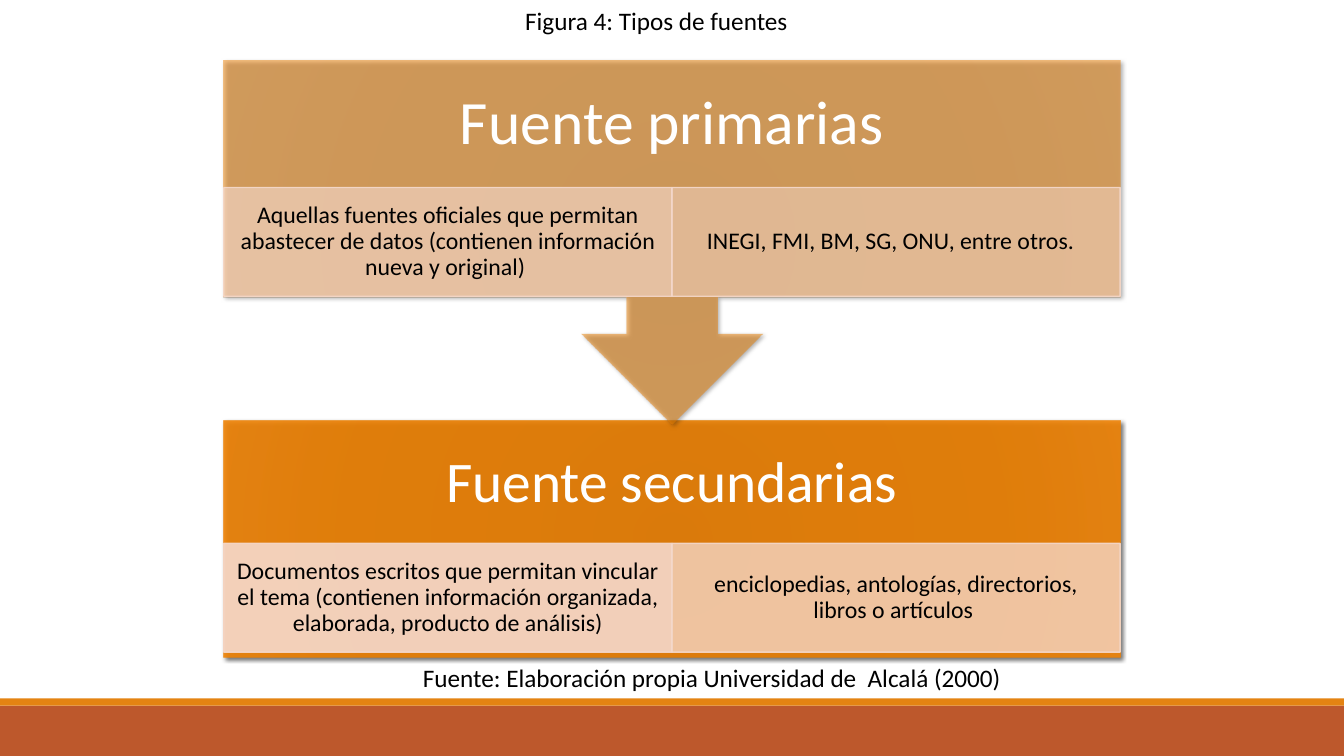
from lxml import etree
from pptx import Presentation
from pptx.dml.color import RGBColor
from pptx.enum.shapes import MSO_SHAPE as Preset
from pptx.enum.text import MSO_ANCHOR as Anchor, PP_ALIGN as Align
from pptx.oxml import parse_xml
from pptx.oxml.ns import qn
from pptx.util import Inches, Pt

NAMESPACE = 'xmlns:a="http://schemas.openxmlformats.org/drawingml/2006/main"'
LEFT, WIDTH = 2.22, 8.89
TITLE_HEIGHT, CELL_HEIGHT = 1.27, 1.08
GLOW_STOPS = [(0, "E57B00"), (34, "E87D00"), (70, "EB7E00"), (100, "EF8407")]
CELL_COLOR = "F5D9CC"


def rgb(value):
    return RGBColor.from_string(value)


def paint(fill, value, opacity=100):
    fill.solid()
    fill.fore_color.rgb = rgb(value)
    if opacity < 100:
        color = fill._xPr.find(qn("a:solidFill"))[0]
        etree.SubElement(color, qn("a:alpha"), val=str(opacity * 1000))


def add_preset(page, preset, left, top, width, height):
    shape = page.shapes.add_shape(
        preset, Inches(left), Inches(top), Inches(width), Inches(height))
    shape.shadow.inherit = False
    shape.line.fill.background()
    return shape


def add_band(page, top, height, color):
    band = add_preset(page, Preset.RECTANGLE, 0, top, 13.33, height)
    paint(band.fill, color)


def add_glowing(page, preset, top, height, opacity):
    """Add a full-width block with a circular gradient and a soft shadow."""
    block = add_preset(page, preset, LEFT, top, WIDTH, height)
    stops = "".join(
        f'<a:gs pos="{position * 1000}"><a:srgbClr val="{color}">'
        f'<a:alpha val="{opacity * 1000}"/></a:srgbClr></a:gs>'
        for position, color in GLOW_STOPS)
    gradient = parse_xml(
        f'<a:gradFill {NAMESPACE} rotWithShape="1"><a:gsLst>{stops}</a:gsLst>'
        '<a:path path="circle"><a:fillToRect l="100000" t="100000" '
        'r="100000" b="100000"/></a:path></a:gradFill>')
    shadow = parse_xml(
        f'<a:outerShdw {NAMESPACE} blurRad="{Pt(3)}" dist="{Pt(2)}" '
        'dir="2700000" algn="ctr" rotWithShape="0"><a:srgbClr val="000000">'
        '<a:alpha val="60000"/></a:srgbClr></a:outerShdw>')
    properties = block._element.spPr
    properties.find(qn("a:prstGeom")).addnext(gradient)
    properties.find(qn("a:effectLst")).append(shadow)
    return block


def write(box, text, size, color="000000", insets=(0.1, 0.05), spacing=None):
    frame = box.text_frame
    frame.word_wrap = True
    frame.vertical_anchor = Anchor.MIDDLE
    frame.margin_left = frame.margin_right = Inches(insets[0])
    frame.margin_top = frame.margin_bottom = Inches(insets[1])
    para = frame.paragraphs[0]
    para.text = text
    para.alignment = Align.CENTER
    if spacing:
        para.line_spacing = spacing
    para.font.name = "Calibri"
    para.font.size = Pt(size)
    para.font.color.rgb = rgb(color)


def add_text(page, left, top, width, height, text, size, **style):
    box = page.shapes.add_textbox(
        Inches(left), Inches(top), Inches(width), Inches(height))
    write(box, text, size, **style)


def add_title(page, top, text, size, inset):
    add_text(page, LEFT, top, WIDTH, TITLE_HEIGHT, text, size,
             color="FFFFFF", insets=(inset, inset), spacing=0.9)


def add_cells(page, top, cells):
    """Split the block's width equally among (text, opacity) cells."""
    width = WIDTH / len(cells)
    for column, (text, opacity) in enumerate(cells):
        cell = add_preset(page, Preset.RECTANGLE, LEFT + column * width, top,
                          width, CELL_HEIGHT)
        paint(cell.fill, CELL_COLOR, opacity)
        paint(cell.line.fill, CELL_COLOR, 90)
        cell.line.width = Pt(1)
        write(cell, text, 17, insets=(0.13, 0.02), spacing=0.9)


def main():
    deck = Presentation()
    deck.slide_width, deck.slide_height = Inches(13.33), Inches(7.5)
    page = deck.slides.add_slide(deck.slide_layouts[6])

    add_band(page, 7, 0.5, "BD582C")
    add_band(page, 6.93, 0.07, "E48312")

    add_glowing(page, Preset.RECTANGLE, 4.17, 2.35, 90)
    add_title(page, 4.17, "Fuente secundarias", 41, 0.32)
    add_cells(page, 5.39, [
        ("Documentos escritos que permitan vincular el tema (contienen "
         "información organizada, elaborada, producto de análisis)", 90),
        ("enciclopedias, antologías, directorios, libros o artículos ", 77),
    ])

    callout = add_glowing(page, Preset.UP_ARROW_CALLOUT, 0.6, 3.61, 50)
    callout.rotation = 180
    add_title(page, 0.6, "Fuente primarias", 44, 0.34)
    add_cells(page, 1.86, [
        ("Aquellas fuentes oficiales que permitan abastecer de datos "
         "(contienen información nueva y original) ", 63),
        ("INEGI, FMI, BM, SG, ONU, entre otros.  ", 50),
    ])

    add_text(page, 3.09, 0.01, 6.84, 0.39, "Figura 4: Tipos de fuentes", 18)
    add_text(page, 0.36, 6.53, 13.46, 0.39,
             "Fuente: Elaboración propia Universidad de  Alcalá (2000) ", 18)
    deck.save("out.pptx")


if __name__ == "__main__":
    main()
